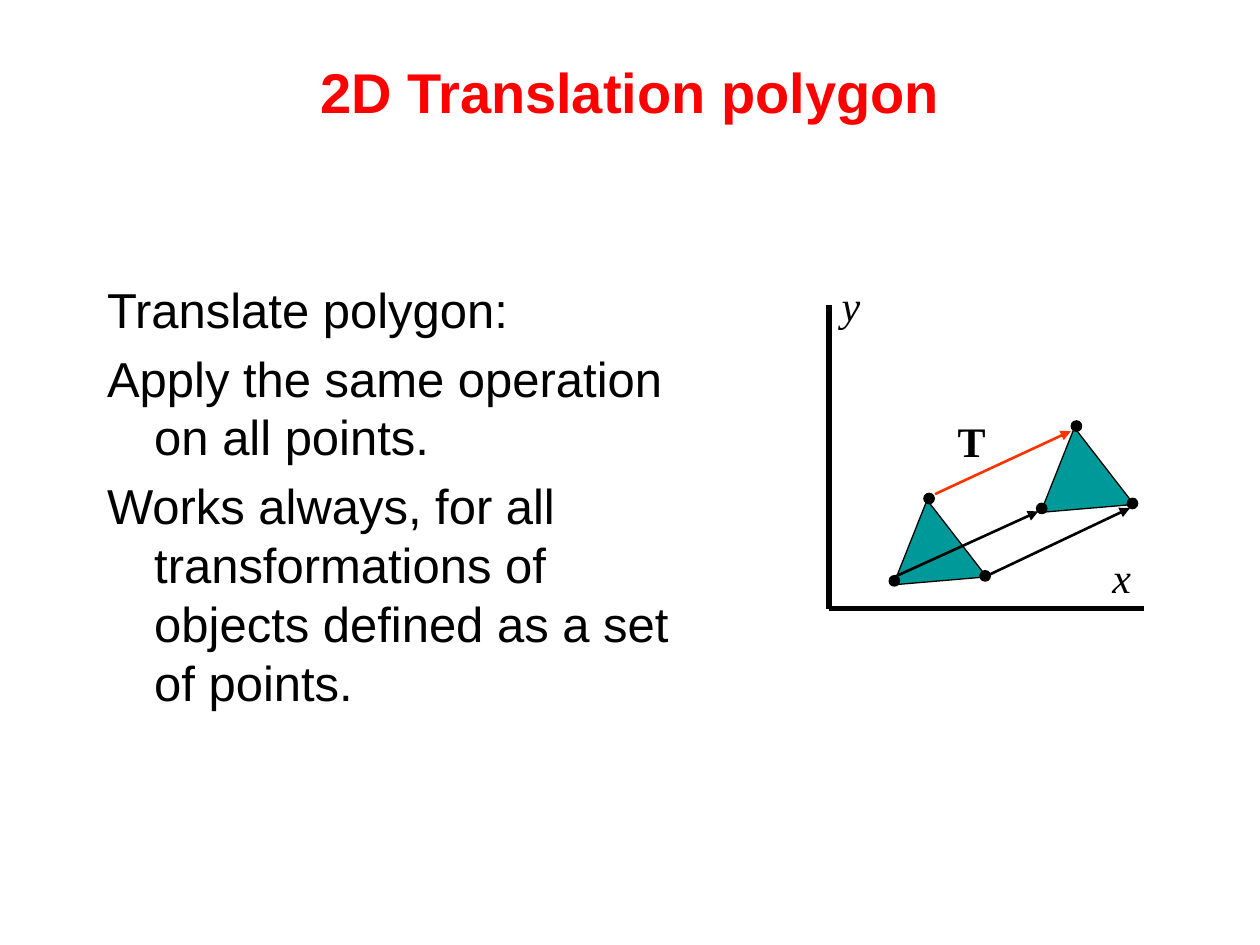
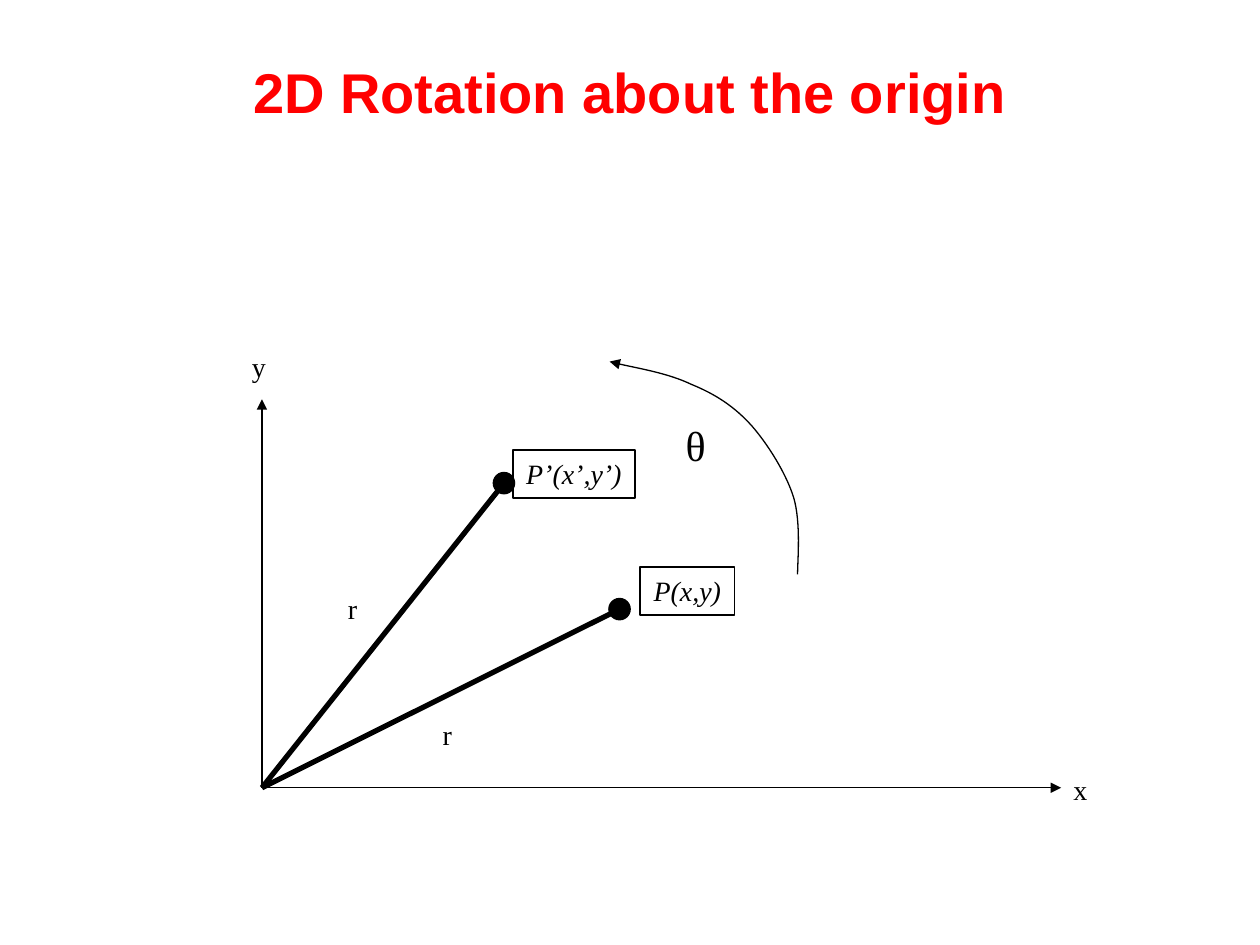
import pptx
import pptx.util
import pptx.dml.color
import pptx.enum.shapes
import pptx.enum.text
import pptx.oxml.ns
import lxml.etree

Cm, Pt, qn = pptx.util.Cm, pptx.util.Pt, pptx.oxml.ns.qn
SHAPE = pptx.enum.shapes.MSO_SHAPE
ALIGN = pptx.enum.text.PP_ALIGN
ANCHOR = pptx.enum.text.MSO_ANCHOR
hexes = {"title": "FF0000", "ink": "000000", "fill": "009999", "move": "FF3300"}
color = {name: pptx.dml.color.RGBColor.from_string(code) for name, code in hexes.items()}
SANS, SERIF = "Arial", "Times New Roman"


def draw_line(slide, start, end, width, tone="ink"):
    line = slide.shapes.add_connector(
        pptx.enum.shapes.MSO_CONNECTOR.STRAIGHT, *map(Cm, start + end))
    line.line.color.rgb = color[tone]
    line.line.width = Pt(width)
    lxml.etree.SubElement(line.element.spPr, qn("a:effectLst"))
    return line


def add_label(slide, words, place, size, bold=False, italic=False):
    """Add a centred serif text box; place is left, top, width, height in cm."""
    box = slide.shapes.add_textbox(*map(Cm, place))
    box.text_frame.word_wrap = False
    para = box.text_frame.paragraphs[0]
    para.text = words
    para.alignment = ALIGN.CENTER
    font = para.font
    font.name, font.size, font.bold, font.italic = SERIF, Pt(size), bold, italic
    font.color.rgb = color["ink"]
    return box


deck = pptx.Presentation()
deck.slide_width, deck.slide_height = Cm(25.4), Cm(19.05)

slides = []
for words in ("2D Translation polygon", "2D Rotation about the origin"):
    slide = deck.slides.add_slide(deck.slide_layouts[5])
    title = slide.shapes.title
    title.left, title.top, title.width, title.height = Cm(1.27), Cm(0.76), Cm(22.86), Cm(2.16)
    title.text_frame.vertical_anchor = ANCHOR.MIDDLE
    para = title.text_frame.paragraphs[0]
    para.text = words
    para.alignment = ALIGN.CENTER
    para.font.name, para.font.size, para.font.bold = SANS, Pt(32), True
    para.font.color.rgb = color["title"]
    slides.append(slide)
shift, turn = slides

# Translation: text
body = shift.shapes.add_textbox(Cm(1.91), Cm(5.51), Cm(12.27), Cm(11.43)).text_frame
body.word_wrap = True
body.text = "\n".join((
    "Translate polygon:",
    "Apply the same operation on all points.",
    "Works always, for all transformations of objects defined as a set of points.",
))
for para in body.paragraphs:
    para.space_before = Pt(5.6)
    para.font.name, para.font.size = SANS, Pt(28)
    para.font.color.rgb = color["ink"]
    props = para._p.get_or_add_pPr()
    props.set("marL", str(Cm(0.95)))
    props.set("indent", str(-Cm(0.95)))

# Translation: the triangle before and after the move
corners = [(18.69, 10.08), (18.01, 11.79), (19.89, 11.63)]
marks = [(18.73, 10.05), (18.03, 11.71), (19.86, 11.61)]
dots = []
for dx, dy in ((0, 0), (2.97, -1.46)):
    spots = [(Cm(x + dx), Cm(y + dy)) for x, y in corners]
    maker = shift.shapes.build_freeform(*spots[0])
    maker.add_line_segments(spots[1:], close=True)
    shape = maker.convert_to_shape()
    shape.shadow.inherit = False
    shape.fill.solid()
    shape.fill.fore_color.rgb = color["fill"]
    shape.line.color.rgb = color["ink"]
    shape.line.width = Pt(0.75)
    dots += [(shift, x + dx, y + dy, 0.21) for x, y in marks]

base = (16.71, 12.27)
for end in ((23.06, 12.27), (16.71, 6.15)):
    draw_line(shift, base, end, 3)
arrows = [
    draw_line(shift, start, end, 1.5, tone)
    for start, end, tone in (
        ((18.85, 9.96), (21.59, 8.69), "move"),
        ((18.03, 11.63), (20.93, 10.31), "ink"),
        ((19.89, 11.61), (22.78, 10.24), "ink"),
    )
]
add_label(shift, "x", (22.17, 11, 0.89, 1.27), 24, italic=True)
add_label(shift, "y", (16.71, 5.51, 0.89, 1.27), 24, italic=True)
add_label(shift, "T", (19.05, 8.26, 1.07, 1.27), 24, bold=True)

# Rotation: axes and radii
base = (5.28, 15.88)
for end in ((5.28, 8.05), (21.39, 15.88)):
    arrows.append(draw_line(turn, base, end, 0.75))
for x, y in ((10.16, 9.74), (12.49, 12.28)):
    draw_line(turn, base, (x, y), 3)
    dots.append((turn, x, y, 0.43))

for words, left, top in (("y", 4.83, 6.93), ("x", 21.39, 15.44),
                         ("r", 6.73, 11.81), ("r", 8.64, 14.35)):
    add_label(turn, words, (left, top, 0.75, 0.94), 16)
for words, place in (("P’(x’,y’)", (10.34, 9.07, 2.46, 0.97)),
                     ("P(x,y)", (12.9, 11.43, 1.91, 0.97))):
    box = add_label(turn, words, place, 16, italic=True)
    box.line.color.rgb = color["ink"]
    box.line.width = Pt(0.75)
add_label(turn, "θ", (13.54, 8.33, 0.97, 1.27), 24)

# Rotation: arc through Bezier control points, three to a curve
bends = [
    (16.08, 11.58),
    (16.08, 11.3), (16.15, 10.54), (16, 10.03),
    (15.85, 9.55), (15.49, 8.97), (15.16, 8.59),
    (14.81, 8.2), (14.43, 7.95), (13.94, 7.75),
    (13.46, 7.52), (12.65, 7.39), (12.29, 7.29),
]
spots = [(Cm(x), Cm(y)) for x, y in bends]
maker = turn.shapes.build_freeform(*spots[0])
maker.add_line_segments(spots[1:], close=False)
arc = maker.convert_to_shape()
arc.shadow.inherit = False
arc.fill.background()
arc.line.color.rgb = color["ink"]
arc.line.width = Pt(0.75)
steps = list(arc.element.iter(qn("a:lnTo")))
for i in range(0, len(steps), 3):
    curve = lxml.etree.Element(qn("a:cubicBezTo"))
    steps[i].addprevious(curve)
    for step in steps[i:i + 3]:
        curve.append(step[0])
        step.getparent().remove(step)
arrows.append(arc)

# Dots and arrowheads of both slides
for slide, x, y, size in dots:
    dot = slide.shapes.add_shape(
        SHAPE.OVAL, Cm(x - size / 2), Cm(y - size / 2), Cm(size), Cm(size))
    dot.shadow.inherit = False
    dot.fill.solid()
    dot.fill.fore_color.rgb = color["ink"]
    dot.line.color.rgb = color["ink"]
    dot.line.width = Pt(0.75)
for arrow in arrows:
    stroke = next(arrow.element.iter(qn("a:ln")))
    lxml.etree.SubElement(stroke, qn("a:tailEnd"), type="triangle")

deck.save("out.pptx")
